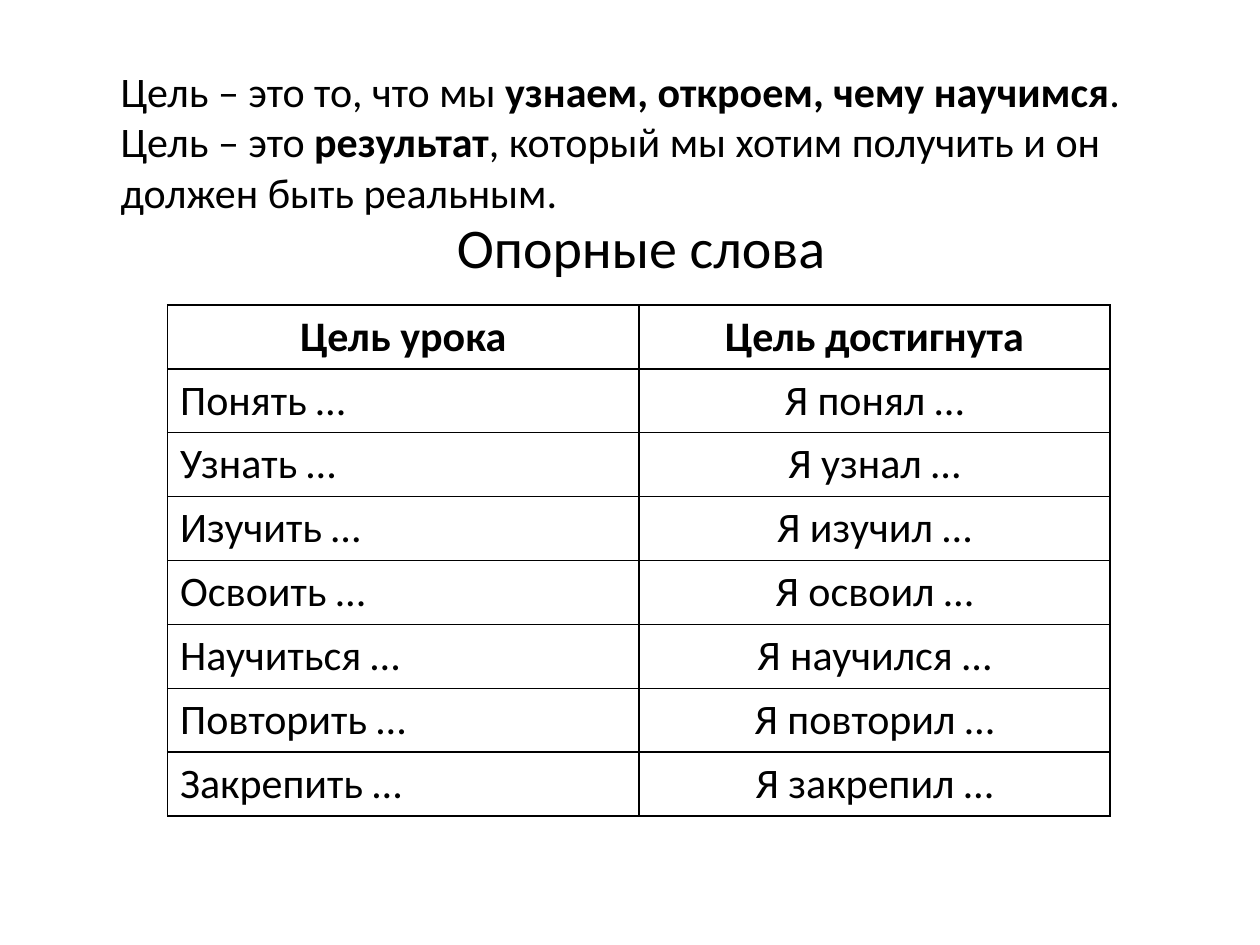
from lxml import etree
from pptx import Presentation
from pptx import util as u
from pptx.dml.color import RGBColor
from pptx.enum import text
from pptx.oxml.ns import qn

INK = "000000"
PAPER = "FFFFFF"
FONT = "Calibri"
LEFT = text.PP_ALIGN.LEFT
MID = text.PP_ALIGN.CENTER

GOALS = [
    [("Цель – это то, что мы ", False),
     ("узнаем, откроем, чему научимся", True),
     (".", False)],
    [("Цель – это ", False),
     ("результат", True),
     (", который мы хотим получить и он должен быть реальным.", False)],
]
WORDS = [
    ("Цель урока", "Цель достигнута"),
    ("Понять …", "Я понял …"),
    ("Узнать …", "Я узнал …"),
    ("Изучить …", "Я изучил …"),
    ("Освоить …", "Я освоил …"),
    ("Научиться …", "Я научился …"),
    ("Повторить …", "Я повторил …"),
    ("Закрепить …", "Я закрепил …"),
]


def tint(item, shade):
    item.rgb = RGBColor.from_string(shade)


def add_run(para, words, size, bold=False):
    run = para.add_run()
    run.text = words
    font = run.font
    font.name = FONT
    font.size = u.Pt(size)
    font.bold = bold
    tint(font.color, INK)


def add_text(slide, box, paras, size, align=LEFT):
    frame = slide.shapes.add_textbox(*map(u.Inches, box)).text_frame
    frame.word_wrap = True
    frame.auto_size = text.MSO_AUTO_SIZE.SHAPE_TO_FIT_TEXT
    for row, runs in enumerate(paras):
        para = frame.add_paragraph() if row else frame.paragraphs[0]
        para.alignment = align
        for words, bold in runs:
            add_run(para, words, size, bold)


def add_edges(cell):
    props = cell._tc.get_or_add_tcPr()
    for row, side in enumerate(("lnL", "lnR", "lnT", "lnB")):
        line = etree.Element(qn(f"a:{side}"), w=str(u.Pt(1)))
        fill = etree.SubElement(line, qn("a:solidFill"))
        etree.SubElement(fill, qn("a:srgbClr"), val=INK)
        props.insert(row, line)


def add_grid(slide, box, rows):
    frame = slide.shapes.add_table(len(rows), len(rows[0]), *map(u.Inches, box))
    table = frame.table
    for r, row in enumerate(rows):
        for c, words in enumerate(row):
            cell = table.cell(r, c)
            cell.fill.solid()
            tint(cell.fill.fore_color, PAPER)
            add_edges(cell)
            para = cell.text_frame.paragraphs[0]
            para.alignment = MID if r == 0 or c == 1 else LEFT
            add_run(para, words, 24, r == 0)


def main():
    deck = Presentation()
    deck.slide_width = u.Inches(10)
    deck.slide_height = u.Inches(7.5)
    slide = deck.slides.add_slide(deck.slide_layouts[6])
    add_grid(slide, (1.33, 2.42, 7.48, 4), WORDS)
    add_text(slide, (2.5, 1.64, 5.28, 0.64), [[("Опорные слова ", False)]], 32, MID)
    add_text(slide, (0.86, 0.47, 8.2, 1.31), GOALS, 24)
    deck.save("out.pptx")


if __name__ == "__main__":
    main()
